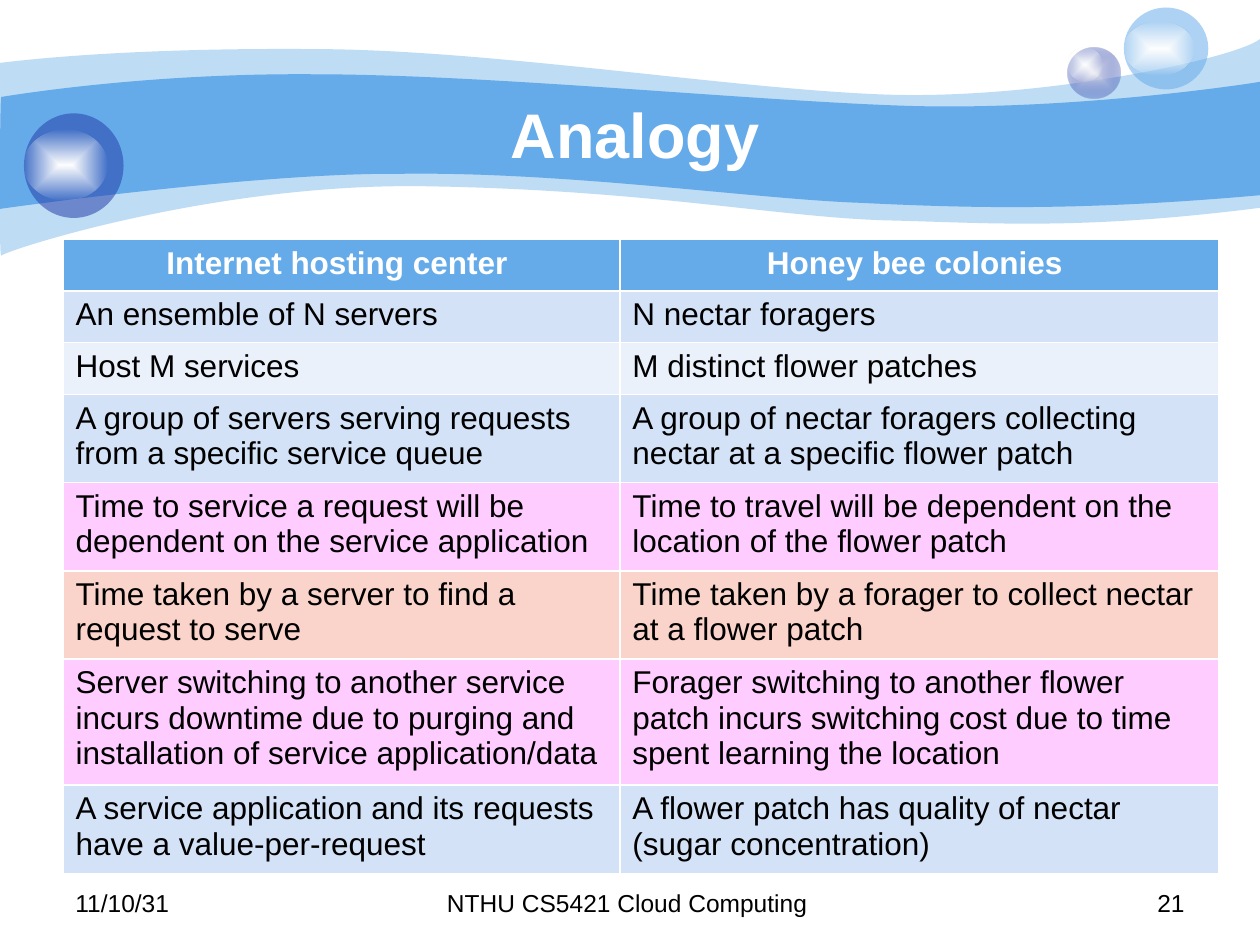
from lxml import etree
from pptx import Presentation
from pptx.dml.color import RGBColor
from pptx.enum.shapes import MSO_SHAPE
from pptx.enum.text import MSO_ANCHOR, PP_ALIGN
from pptx.oxml.ns import qn
from pptx.util import Inches, Pt

OVAL = MSO_SHAPE.OVAL
MIDDLE = MSO_ANCHOR.MIDDLE
LEFT, CENTER, RIGHT = PP_ALIGN.LEFT, PP_ALIGN.CENTER, PP_ALIGN.RIGHT
FONT = "Arial"
BLUE, NAVY, WHITE, BLACK = "65AAE9", "233DA9", "FFFFFF", "000000"
PALE, PALER, PINK, PEACH = "D3E2F7", "EAF1FB", "FFCCFF", "FAD4CA"


def set_font(text, size, color, bold=False):
    text.font.name, text.font.size, text.font.bold = FONT, Pt(size), bold
    text.font.color.rgb = RGBColor.from_string(color)


def paint(sp, *stops):
    sp.shadow.inherit = False
    if len(stops) == 1:
        sp.fill.solid()
        colors = [sp.fill.fore_color]
    else:
        sp.fill.gradient()
        colors = [stop.color for stop in sp.fill.gradient_stops]
        grad = sp._element.spPr.find(qn("a:gradFill"))
        grad.remove(grad.find(qn("a:lin")))
        center = etree.SubElement(grad, qn("a:path"), path="shape")
        etree.SubElement(center, qn("a:fillToRect"), l="50000", t="50000", r="50000", b="50000")
    for color, (value, _) in zip(colors, stops):
        color.rgb = RGBColor.from_string(value)
    for node, (_, alpha) in zip(sp._element.spPr.iter(qn("a:srgbClr")), stops):
        if alpha < 100:
            etree.SubElement(node, qn("a:alpha"), val=str(alpha * 1000))
    sp.line.fill.background()


prs = Presentation()
prs.slide_width, prs.slide_height = Inches(10), Inches(7.5)
W, H = prs.slide_width, prs.slide_height
s = prs.slides.add_slide(prs.slide_layouts[5])

waves = [
    (41, (0, 50), [
        [(24, 47), (107, 38), (247, 39)],
        [(386, 39), (575, 70), (699, 75)],
        [(822, 80), (980, 47), (1000, 31)],
        [(1000, 165)],
        [(858, 183), (787, 177), (705, 175)],
        [(622, 173), (515, 151), (343, 148)],
        [(172, 144), (4, 199), (1, 203)],
        [(-1, 208), (0, 75), (0, 50)]]),
    (100, (1, 77), [
        [(2, 77), (110, 58), (248, 59)],
        [(386, 59), (595, 80), (718, 84)],
        [(841, 88), (976, 69), (1000, 65)],
        [(1000, 155)],
        [(853, 168), (765, 165), (682, 161)],
        [(599, 158), (447, 136), (317, 138)],
        [(203, 137), (-2, 166), (-1, 166)],
        [(0, 166), (0, 77), (1, 77)]]),
]
for alpha, start, segments in waves:
    builder = s.shapes.build_freeform(*start, scale=W / 1000)
    builder.add_line_segments([point for segment in segments for point in segment], close=True)
    wave = builder.convert_to_shape()
    lines = iter(list(wave._element.spPr.iter(qn("a:lnTo"))))
    for segment in segments:
        parts = [next(lines) for _ in segment]
        if len(parts) == 3:
            curve = etree.Element(qn("a:cubicBezTo"))
            parts[0].addprevious(curve)
            for part in parts:
                curve.append(part[0])
                part.getparent().remove(part)
    paint(wave, (BLUE, alpha))

shine = [(WHITE, 100), (WHITE, 0)]
bubbles = [
    [((8.47, 0.38, 0.42, 0.4), [("E1E2ED", 100), (NAVY, 31)]), ((8.47, 0.38, 0.28, 0.27), shine)],
    [((8.92, 0.06, 0.67, 0.65), [(BLUE, 53)]), ((8.92, 0.17, 0.56, 0.43), shine)],
    [((0.19, 0.9, 0.79, 0.83), [(NAVY, 53)]), ((0.19, 1.03, 0.66, 0.56), shine)],
]
for bubble in bubbles:
    group = s.shapes.add_group_shape()
    for box, stops in bubble:
        paint(group.shapes.add_shape(OVAL, *map(Inches, box)), *stops)

title = s.shapes.title
s.shapes._spTree.append(title._element)
title.left, title.top, title.width, title.height = int(W * 0.1), int(H * 0.1), Inches(8.08), Inches(0.62)
tf = title.text_frame
tf.text, tf.vertical_anchor = "Analogy", MIDDLE
tf.paragraphs[0].alignment = CENTER
set_font(tf.paragraphs[0], 36, WHITE, True)

for x, width, align, text in [
    (0.5, 2.33, LEFT, "11/10/31"),
    (3.42, 3.17, CENTER, "NTHU CS5421 Cloud Computing "),
    (7.17, 2.33, RIGHT, "21"),
]:
    tf = s.shapes.add_textbox(Inches(x), Inches(7), Inches(width), Inches(0.35)).text_frame
    tf.word_wrap = True
    p = tf.paragraphs[0]
    p.text, p.alignment = text, align
    set_font(p, 14, BLACK)

rows = [
    (BLUE, "Internet hosting center ", "Honey bee colonies "),
    (PALE, "An ensemble of N servers", "N nectar foragers"),
    (PALER, "Host M services", "M distinct flower patches"),
    (PALE, "A group of servers serving requests from a specific service queue",
     "A group of nectar foragers collecting nectar at a specific flower patch"),
    (PINK, "Time to service a request will be dependent on the service application",
     "Time to travel will be dependent on the location of the flower patch"),
    (PEACH, "Time taken by a server to find a request to serve",
     "Time taken by a forager to collect nectar at a flower patch"),
    (PINK, "Server switching to another service incurs downtime due to purging and "
     "installation of service application/data",
     "Forager switching to another flower patch incurs switching cost due to time "
     "spent learning the location"),
    (PALE, "A service application and its requests have a value-per-request",
     "A flower patch has quality of nectar (sugar concentration)"),
]
row_height = Inches(0.41)
table = s.shapes.add_table(len(rows), 2, Inches(0.5), Inches(1.9), Inches(9.17),
                           row_height * len(rows)).table
for column, width in zip(table.columns, (4.42, 4.75)):
    column.width = Inches(width)
for r, (fill, *texts) in enumerate(rows):
    table.rows[r].height = row_height
    header = r == 0
    for c, text in enumerate(texts):
        cell = table.cell(r, c)
        cell.fill.solid()
        cell.fill.fore_color.rgb = RGBColor.from_string(fill)
        p = cell.text_frame.paragraphs[0]
        p.text, p.alignment = text, CENTER if header else LEFT
        set_font(p.runs[0], 18, WHITE if header else BLACK, header)

prs.save("out.pptx")
